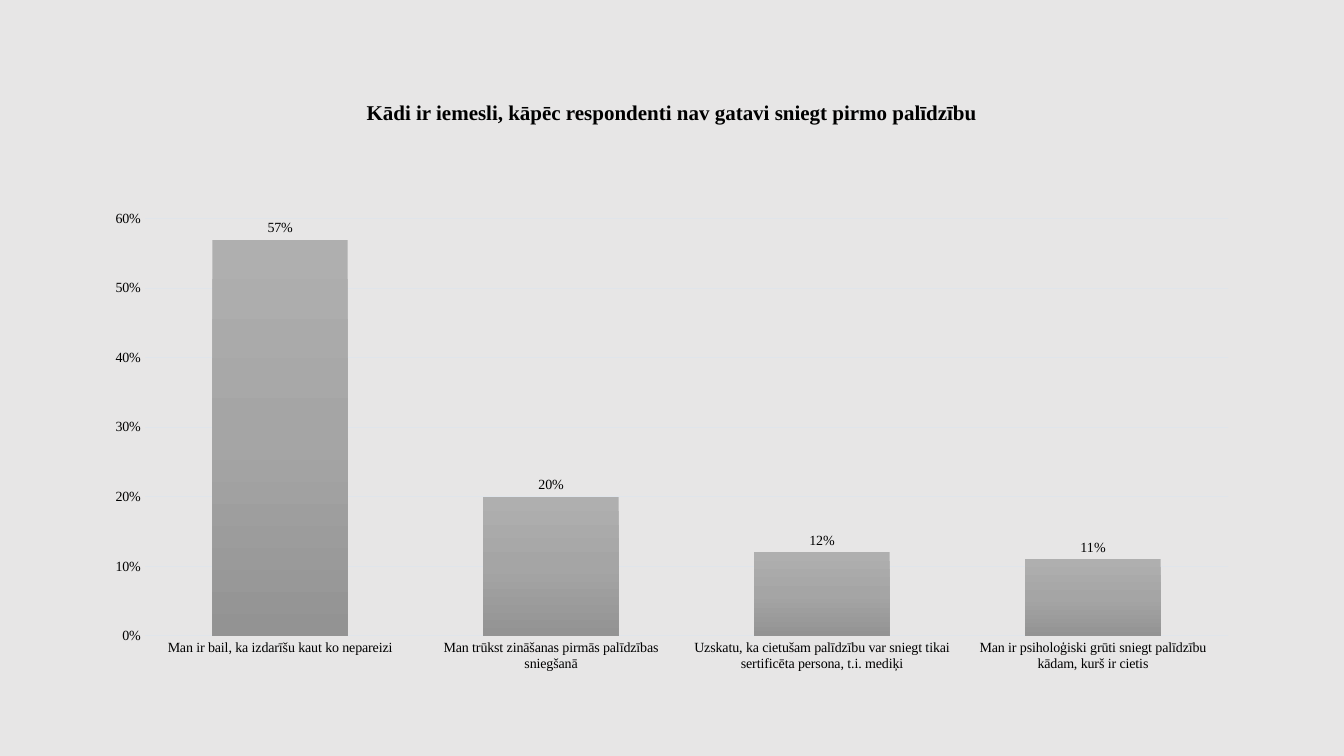
from copy import deepcopy
from pptx import Presentation
from pptx.chart.data import CategoryChartData
from pptx.dml.color import RGBColor
from pptx.enum.chart import XL_CHART_TYPE, XL_LABEL_POSITION, XL_TICK_MARK
from pptx.enum.text import MSO_ANCHOR, PP_ALIGN
from pptx.util import Pt

FACE = "Times New Roman"
INK, PAPER, GRID = "000000", "E7E6E6", "E0E5EB"
SHADES = ["AFAFAF", "A5A5A5", "939393"]
TITLE = "Kādi ir iemesli, kāpēc respondenti nav gatavi sniegt pirmo palīdzību"
REASONS = {
    "Man ir bail, ka izdarīšu kaut ko nepareizi": 0.57,
    "Man trūkst zināšanas pirmās palīdzības sniegšanā": 0.20,
    "Uzskatu, ka cietušam palīdzību var sniegt tikai sertificēta persona, t.i. mediķi": 0.12,
    "Man ir psiholoģiski grūti sniegt palīdzību kādam, kurš ir cietis": 0.11,
}


def tint(code):
    return RGBColor.from_string(code)


def apply(item, style):
    for name, value in style.items():
        setattr(item, name, value)


def set_font(font, size, bold=False):
    apply(font, {"name": FACE, "size": Pt(size), "bold": bold})
    font.color.rgb = tint(INK)


def set_line(line):
    line.color.rgb = tint(GRID)
    line.width = Pt(0.75)


def shade(fill):
    """Fill from top to bottom with evenly spaced shades."""
    fill.gradient()
    fill.gradient_angle = 270
    first = fill.gradient_stops[0]._gs
    first.addnext(deepcopy(first))
    for i, (stop, code) in enumerate(zip(fill.gradient_stops, SHADES)):
        stop.color.rgb = tint(code)
        stop.position = i / (len(SHADES) - 1)


def add_title(slide, box):
    frame = slide.shapes.add_textbox(*box).text_frame
    apply(frame, {"word_wrap": True, "vertical_anchor": MSO_ANCHOR.MIDDLE})
    para = frame.paragraphs[0]
    apply(para, {"alignment": PP_ALIGN.CENTER, "line_spacing": 0.9})
    run = para.add_run()
    run.text = TITLE
    set_font(run.font, 15, True)


def add_bars(slide, box):
    data = CategoryChartData(number_format="0%")
    data.categories = list(REASONS)
    data.add_series("Series 1", list(REASONS.values()))
    chart = slide.shapes.add_chart(
        XL_CHART_TYPE.COLUMN_CLUSTERED, *box, data).chart
    apply(chart, {"has_title": False, "has_legend": False})
    set_font(chart.font, 10)

    # Columns and their labels
    plot = chart.plots[0]
    apply(plot, {"gap_width": 100, "overlap": -24, "vary_by_categories": False,
                 "has_data_labels": True})
    shade(plot.series[0].format.fill)
    labels = plot.data_labels
    apply(labels, {"show_value": True, "position": XL_LABEL_POSITION.OUTSIDE_END,
                   "number_format": "0%", "number_format_is_linked": False})
    set_font(labels.font, 10)

    # Axes and grid
    for axis in (chart.category_axis, chart.value_axis):
        apply(axis, {"major_tick_mark": XL_TICK_MARK.NONE,
                     "minor_tick_mark": XL_TICK_MARK.NONE})
        set_font(axis.tick_labels.font, 10)
    set_line(chart.category_axis.format.line)
    scale = chart.value_axis
    apply(scale, {"minimum_scale": 0, "maximum_scale": 0.6, "major_unit": 0.1,
                  "has_major_gridlines": True})
    apply(scale.tick_labels, {"number_format": "0%",
                              "number_format_is_linked": False})
    scale.format.line.fill.background()
    set_line(scale.major_gridlines.format.line)


def main():
    deck = Presentation()
    apply(deck, {"slide_width": Pt(960), "slide_height": Pt(540)})
    slide = deck.slides.add_slide(deck.slide_layouts[6])
    back = slide.background.fill
    back.solid()
    back.fore_color.rgb = tint(PAPER)

    # Title above, chart below, in one column
    left, width = Pt(66), Pt(828)
    add_title(slide, (left, Pt(28.75), width, Pt(104.4)))
    add_bars(slide, (left, Pt(143.75), width, Pt(342.6)))
    deck.save("out.pptx")


if __name__ == "__main__":
    main()
